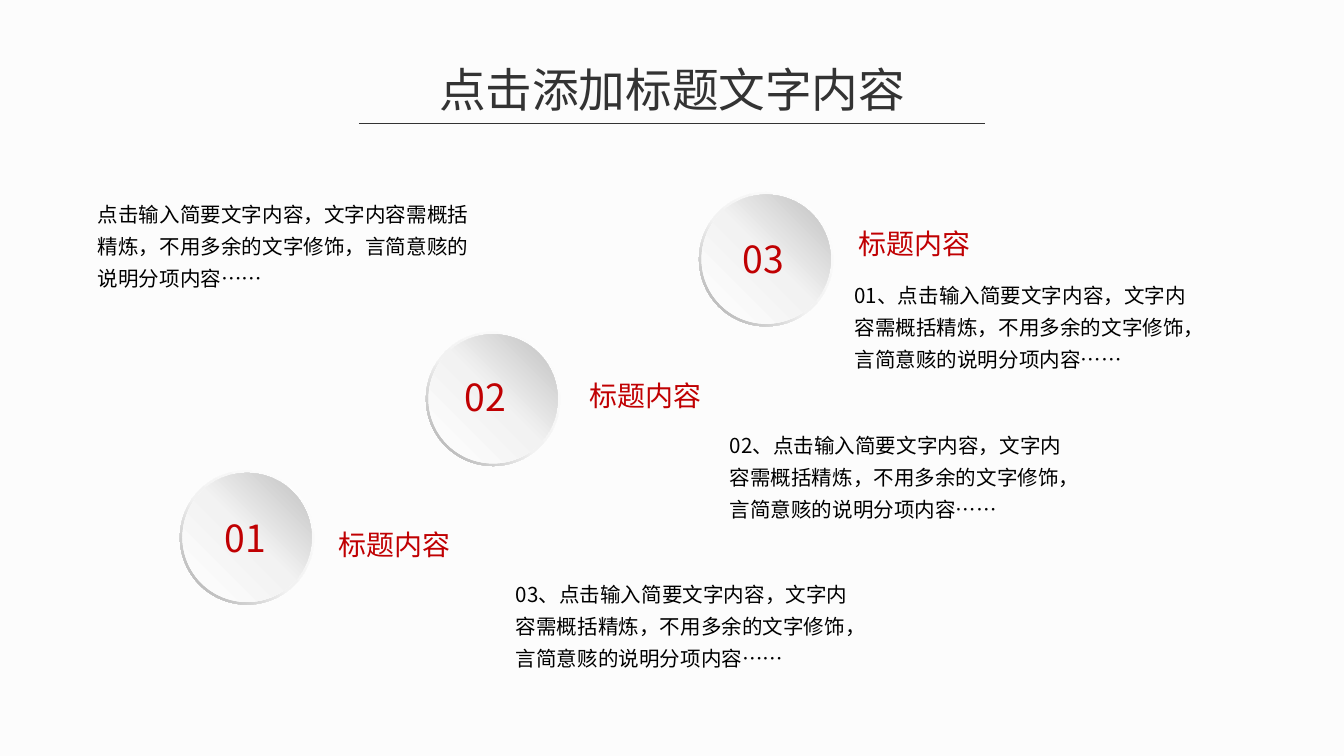
from copy import deepcopy
from lxml.etree import SubElement
from pptx import Presentation
from pptx.dml.color import RGBColor
from pptx.enum.shapes import MSO_CONNECTOR as CONN, MSO_SHAPE as SHAPE
from pptx.enum.text import MSO_ANCHOR as ANCHOR, PP_ALIGN as ALIGN
from pptx.oxml.ns import qn
from pptx.util import Cm, Pt

FONT = "Noto Sans CJK SC"
RED = "C00002"
BODY = "点击输入简要文字内容，文字内容需概括精炼，不用多余的文字修饰，言简意赅的说明分项内容……"
rgb = RGBColor.from_string


def add_text(shapes, text, x, y, w, h, size, color, spacing=None, wrap=True):
    s = shapes.add_textbox(Cm(x), Cm(y), Cm(w), Cm(h))
    tf = s.text_frame
    tf.word_wrap = wrap
    tf.vertical_anchor = ANCHOR.TOP if spacing else ANCHOR.MIDDLE
    tf.text = text
    p = tf.paragraphs[0]
    if spacing:
        p.line_spacing = Pt(spacing)
    r = p.runs[0]
    r.font.size = Pt(size)
    r.font.name = FONT
    r.font.color.rgb = rgb(color)
    SubElement(r.font._element, qn("a:ea")).set("typeface", FONT)
    return p


def add_disc(shapes, kind, x, y, size, angle, stops):
    s = shapes.add_shape(kind, Cm(x), Cm(y), Cm(size), Cm(size))
    s.shadow.inherit = False
    s.line.fill.background()
    s.fill.gradient()
    s.fill.gradient_angle = angle
    gs_list = s._element.spPr.find(".//" + qn("a:gsLst"))
    gs_list.append(deepcopy(gs_list[-1]))
    for stop, (position, color) in zip(s.fill.gradient_stops, stops):
        stop.position = position
        stop.color.rgb = rgb(color)
    return s


prs = Presentation()
prs.slide_width, prs.slide_height = Cm(25.4), Cm(14.29)
slide = prs.slides.add_slide(prs.slide_layouts[6])
slide.background.fill.solid()
slide.background.fill.fore_color.rgb = rgb("FCFCFC")

p = add_text(slide.shapes, "点击添加标题文字内容", 8, 1.02, 9.4, 1.32, 25, "333333")
p.alignment = ALIGN.CENTER
rule = slide.shapes.add_connector(CONN.STRAIGHT, Cm(6.78), Cm(2.34), Cm(18.62), Cm(2.34))
rule.line.color.rgb = rgb("333333")
rule.line.width = Pt(0.75)
SubElement(rule._element.spPr, qn("a:effectLst"))

add_text(slide.shapes, BODY, 1.6, 3.56, 7.72, 2.08, 11, "000000", 17.15)

steps = [
    ("03", "01", (13.21, 3.63), (13.79, 4.32), (15.98, 4.27), (15.9, 5.08)),
    ("02", "02", (8.05, 6.27), (8.53, 6.93), (10.9, 7.14), (13.54, 7.92)),
    ("01", "03", (3.4, 8.89), (3.99, 9.6), (6.15, 9.96), (9.5, 10.74)),
]
for number, item, (x, y), number_at, heading_at, body_at in steps:
    group = slide.shapes.add_group_shape()
    ring = add_disc(group.shapes, SHAPE.DONUT, x, y, 2.54, 225,
                    [(0, "FFFFFF"), (0.55, "F2F2F2"), (1, "A6A6A6")])
    ring.adjustments[0] = 0.05
    add_disc(group.shapes, SHAPE.OVAL, x + 0.05, y + 0.05, 2.44, 45,
             [(0, "FFFFFF"), (0.51, "F2F2F2"), (1, "BFBFBF")])
    add_text(group.shapes, number, *number_at, 1.4, 1.12, 20, RED)
    add_text(slide.shapes, "标题内容", *heading_at, 2.64, 0.79, 15, RED, 15, False)
    add_text(slide.shapes, f"{item}、{BODY}", *body_at, 7.01, 2.08, 11, "000000", 17.15)

prs.save("out.pptx")
